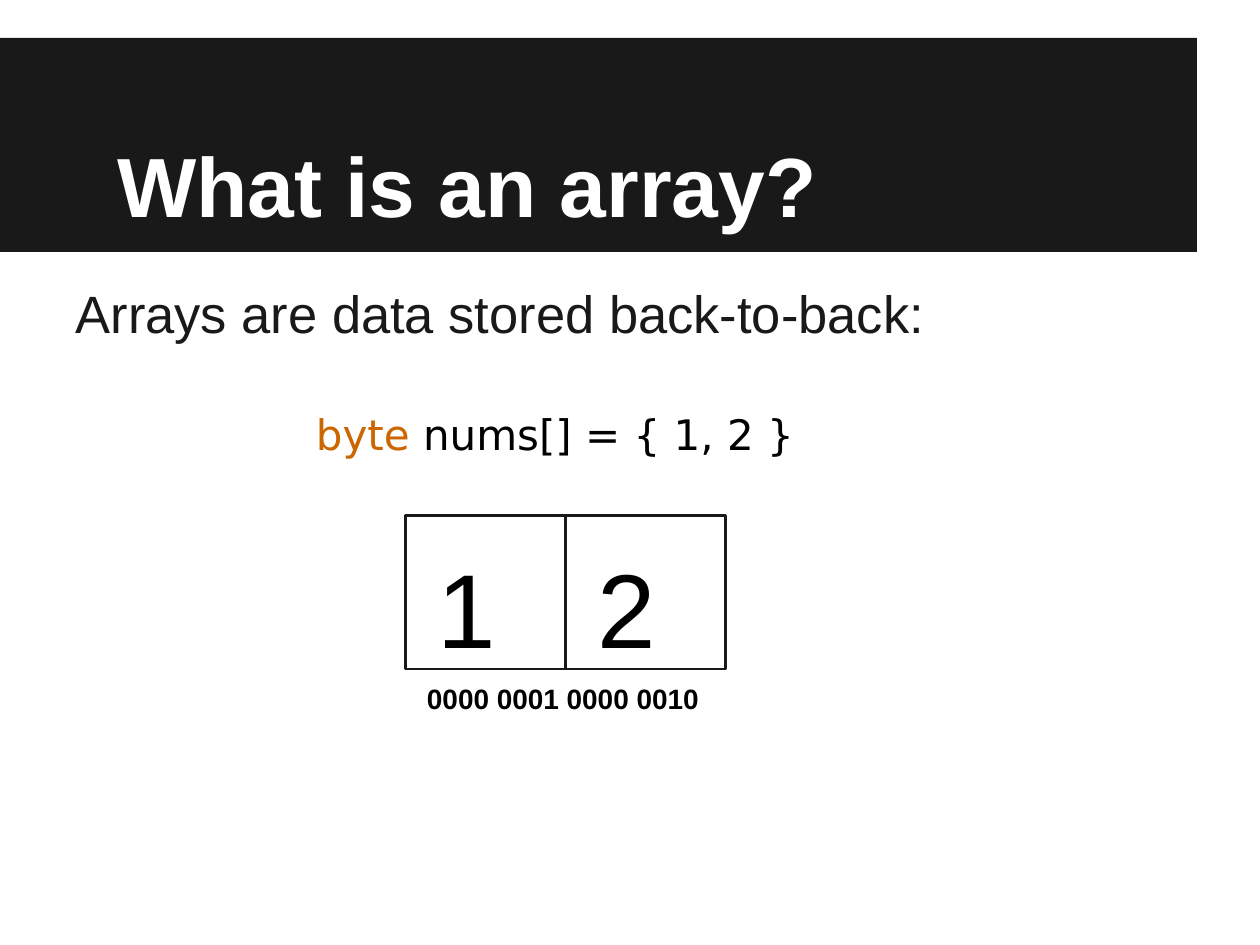
from dataclasses import dataclass

from lxml import etree
from pptx import Presentation
from pptx.dml.color import RGBColor
from pptx.enum.shapes import MSO_SHAPE
from pptx.enum.text import MSO_ANCHOR, MSO_AUTO_SIZE, PP_ALIGN
from pptx.oxml.ns import qn
from pptx.util import Inches, Pt

RECTANGLE = MSO_SHAPE.RECTANGLE
TOP, BOTTOM = MSO_ANCHOR.TOP, MSO_ANCHOR.BOTTOM
LEFT, CENTER = PP_ALIGN.LEFT, PP_ALIGN.CENTER
FIT_SHAPE = MSO_AUTO_SIZE.SHAPE_TO_FIT_TEXT

DARK, WHITE, BLACK, ORANGE = "191919", "FFFFFF", "000000", "CC6600"
PAGE_WIDTH, PAGE_HEIGHT = 10, 7.5
CELL_LEFT, CELL_TOP, CELL_WIDTH, CELL_HEIGHT = 3.22, 4.09, 1.27, 1.22


@dataclass
class Area:
    left: float
    top: float
    width: float
    height: float

    def lengths(self):
        return [Inches(n) for n in (self.left, self.top, self.width, self.height)]


@dataclass
class Span:
    text: str
    color: str = BLACK


def rgb(color: str) -> RGBColor:
    return RGBColor.from_string(color)


def place(box, area: Area):
    box.left, box.top, box.width, box.height = area.lengths()
    return box


def add_rectangle(page, area: Area, fill: str | None = None, line: str | None = None):
    box = page.shapes.add_shape(RECTANGLE, *area.lengths())
    box.shadow.inherit = False
    if fill:
        box.fill.solid()
        box.fill.fore_color.rgb = rgb(fill)
    else:
        box.fill.background()
    if line:
        box.line.color.rgb = rgb(line)
        box.line.width = Pt(1.5)
    else:
        box.line.fill.background()
    return box


def write(box, *spans: Span, size: float, font: str = "Arial", bold: bool = False,
          align=LEFT, anchor=TOP, margin: float = 0, indent: float = 0,
          space_before: float = 0):
    frame = box.text_frame
    frame.word_wrap = True
    frame.auto_size = FIT_SHAPE
    frame.vertical_anchor = anchor
    frame.margin_left = frame.margin_right = Inches(0.1)
    frame.margin_top = frame.margin_bottom = Inches(0.1)
    para = frame.paragraphs[0]
    para.alignment = align
    para.space_before = Pt(space_before)
    properties = para._p.get_or_add_pPr()
    properties.set("marL", str(Inches(margin)))
    properties.set("indent", str(Inches(indent)))
    etree.SubElement(properties, qn("a:buNone"))
    for span in spans:
        run = para.add_run()
        run.text = span.text
        run.font.name = font
        run.font.size = Pt(size)
        run.font.bold = bold
        run.font.color.rgb = rgb(span.color)


def add_text(page, area: Area, *spans: Span, **style):
    write(page.shapes.add_textbox(*area.lengths()), *spans, **style)


def add_array(page, values: list[str]):
    for column, value in enumerate(values):
        left = CELL_LEFT + column * CELL_WIDTH
        add_rectangle(page, Area(left, CELL_TOP, CELL_WIDTH, CELL_HEIGHT), line=DARK)
        add_text(page, Area(left + 0.15, CELL_TOP + 0.12, 0.99, 0.82),
                 Span(value), size=60)


def main():
    deck = Presentation()
    deck.slide_width, deck.slide_height = Inches(PAGE_WIDTH), Inches(PAGE_HEIGHT)
    page = deck.slides.add_slide(deck.slide_layouts[1])
    title, body = page.placeholders

    band = add_rectangle(page, Area(0, 0.3, 0.95 * PAGE_WIDTH, 1.7), fill=DARK)
    title.element.addprevious(band.element)

    write(place(title, Area(0.5, 0.3, 9, 1.66)), Span("What is an array?", WHITE),
          size=48, bold=True, anchor=BOTTOM, indent=0.33)
    write(place(body, Area(0.5, 2.13, 9, 1.01)),
          Span("Arrays are data stored back-to-back:", DARK),
          size=30, margin=0.38, indent=-0.38, space_before=6)

    add_array(page, ["1", "2"])
    add_text(page, Area(3.29, CELL_TOP + CELL_HEIGHT, 2.55, 0.99),
             Span("0000 0001 0000 0010"), size=16, bold=True)
    add_text(page, Area(0.71, 3.14, 7.39, 1.03),
             Span("byte ", ORANGE), Span("nums[] = { 1, 2 }"),
             size=24, font="DejaVu Sans", align=CENTER)

    deck.save("out.pptx")


if __name__ == "__main__":
    main()
